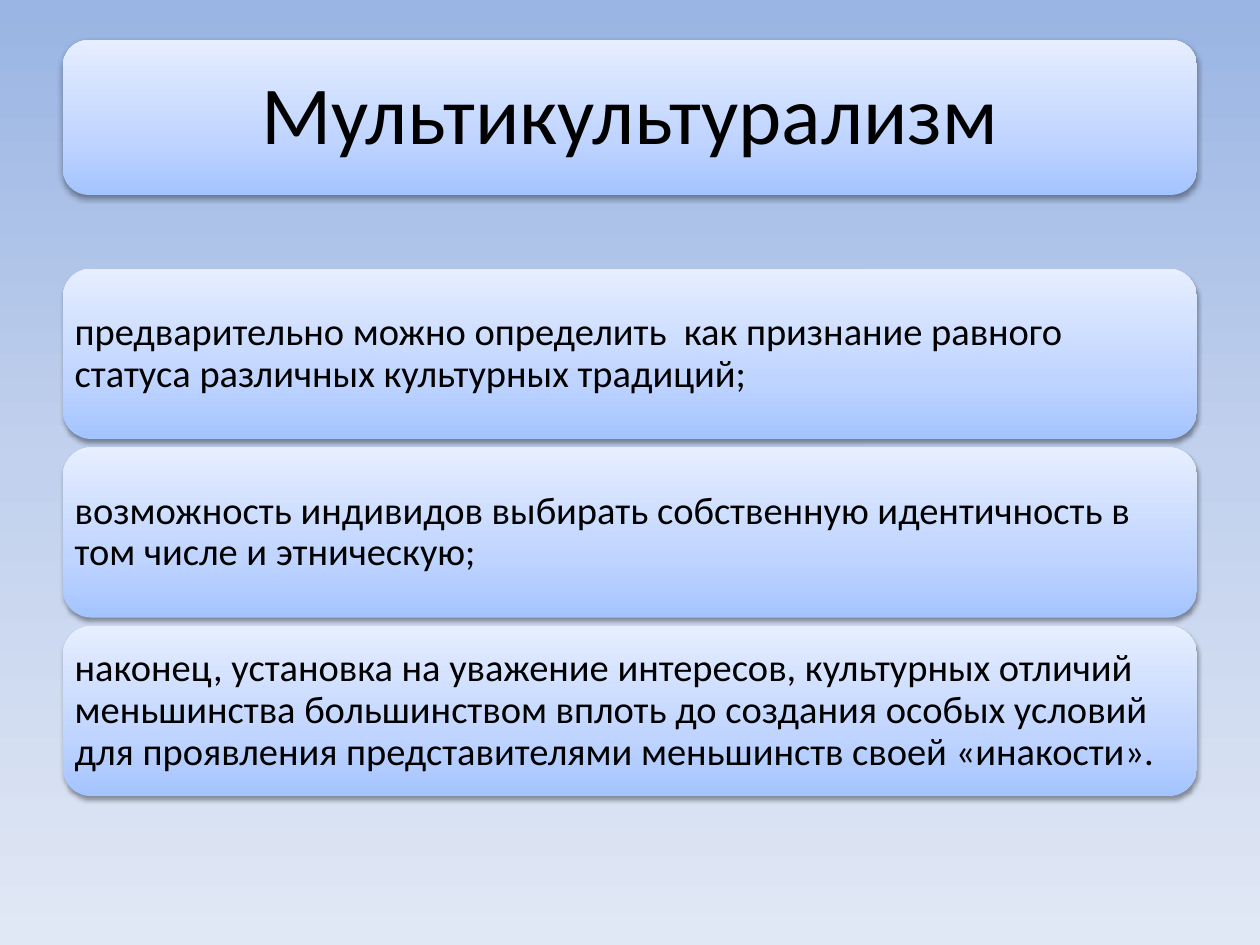
from pptx import Presentation
from pptx.dml.color import RGBColor
from pptx.enum.shapes import MSO_SHAPE
from pptx.enum.text import MSO_ANCHOR, MSO_AUTO_SIZE, PP_ALIGN
from pptx.oxml.ns import qn
from pptx.util import Cm, Pt
from lxml.etree import SubElement

BLACK = RGBColor(0x00, 0x00, 0x00)
BACKGROUND = [(0, RGBColor(0x9A, 0xB5, 0xE4)),
              (50, RGBColor(0xC2, 0xD1, 0xED)),
              (100, RGBColor(0xE1, 0xE8, 0xF5))]
CARD = [(0, RGBColor(0xA4, 0xC4, 0xFF)),
        (35, RGBColor(0xBF, 0xD4, 0xFF)),
        (100, RGBColor(0xE6, 0xEE, 0xFF))]

LEFT, WIDTH = Cm(1.27), Cm(22.86)
TITLE_TOP, TITLE_HEIGHT = Cm(0.81), Cm(3.12)
CARD_TOP, CARD_HEIGHT, CARD_PITCH = Cm(5.42), Cm(3.43), Cm(3.6)

TITLE = "Мультикультурализм"
POINTS = [
    "предварительно можно определить  как признание равного статуса "
    "различных культурных традиций;",
    "возможность индивидов выбирать собственную идентичность в том числе "
    "и этническую;",
    "наконец, установка на уважение интересов, культурных отличий "
    "меньшинства большинством вплоть до создания особых условий для "
    "проявления представителями меньшинств своей «инакости».",
]


def set_gradient(fill, element, stops, angle):
    fill.gradient()
    fill.gradient_angle = angle
    gs_list = element.find(".//" + qn("a:gsLst"))
    for gs in list(gs_list):
        gs_list.remove(gs)
    for position, color in stops:
        gs = SubElement(gs_list, qn("a:gs"), pos=str(position * 1000))
        SubElement(gs, qn("a:srgbClr"), val=str(color))


def add_shadow(sp):
    sp.shadow.inherit = False
    effects = sp._element.spPr.find(qn("a:effectLst"))
    shadow = SubElement(effects, qn("a:outerShdw"), blurRad=str(Pt(3.1)),
                        dist=str(Pt(1.6)), dir="5400000", rotWithShape="0")
    color = SubElement(shadow, qn("a:srgbClr"), val=str(BLACK))
    SubElement(color, qn("a:alpha"), val="38000")


def add_card(s, top, height):
    sp = s.shapes.add_shape(MSO_SHAPE.ROUNDED_RECTANGLE, LEFT, top, WIDTH, height)
    set_gradient(sp.fill, sp._element, CARD, 90)
    sp.line.fill.background()
    add_shadow(sp)
    return sp


def write_text(sp, text, size, align, margin):
    tf = sp.text_frame
    tf.word_wrap = True
    tf.auto_size = MSO_AUTO_SIZE.NONE
    tf.vertical_anchor = MSO_ANCHOR.MIDDLE
    tf.margin_left = tf.margin_right = margin
    tf.margin_top = tf.margin_bottom = margin
    p = tf.paragraphs[0]
    p.alignment = align
    p.line_spacing = 0.9
    r = p.add_run()
    r.text = text
    r.font.name = "Calibri"
    r.font.size = Pt(size)
    r.font.color.rgb = BLACK


def add_title(s):
    add_card(s, TITLE_TOP, TITLE_HEIGHT)
    title = s.shapes.title
    title.left, title.top = LEFT, TITLE_TOP
    title.width, title.height = WIDTH, TITLE_HEIGHT
    write_text(title, TITLE, 47, PP_ALIGN.CENTER, Cm(0.5))
    s.shapes._spTree.append(title._element)


def main():
    prs = Presentation()
    prs.slide_width, prs.slide_height = Cm(25.4), Cm(19.05)
    s = prs.slides.add_slide(prs.slide_layouts[5])
    set_gradient(s.background.fill, s._element, BACKGROUND, 270)
    add_title(s)
    for i, point in enumerate(POINTS):
        sp = add_card(s, CARD_TOP + i * CARD_PITCH, CARD_HEIGHT)
        write_text(sp, point, 22, PP_ALIGN.LEFT, Cm(0.07))
    prs.save("out.pptx")


if __name__ == "__main__":
    main()
